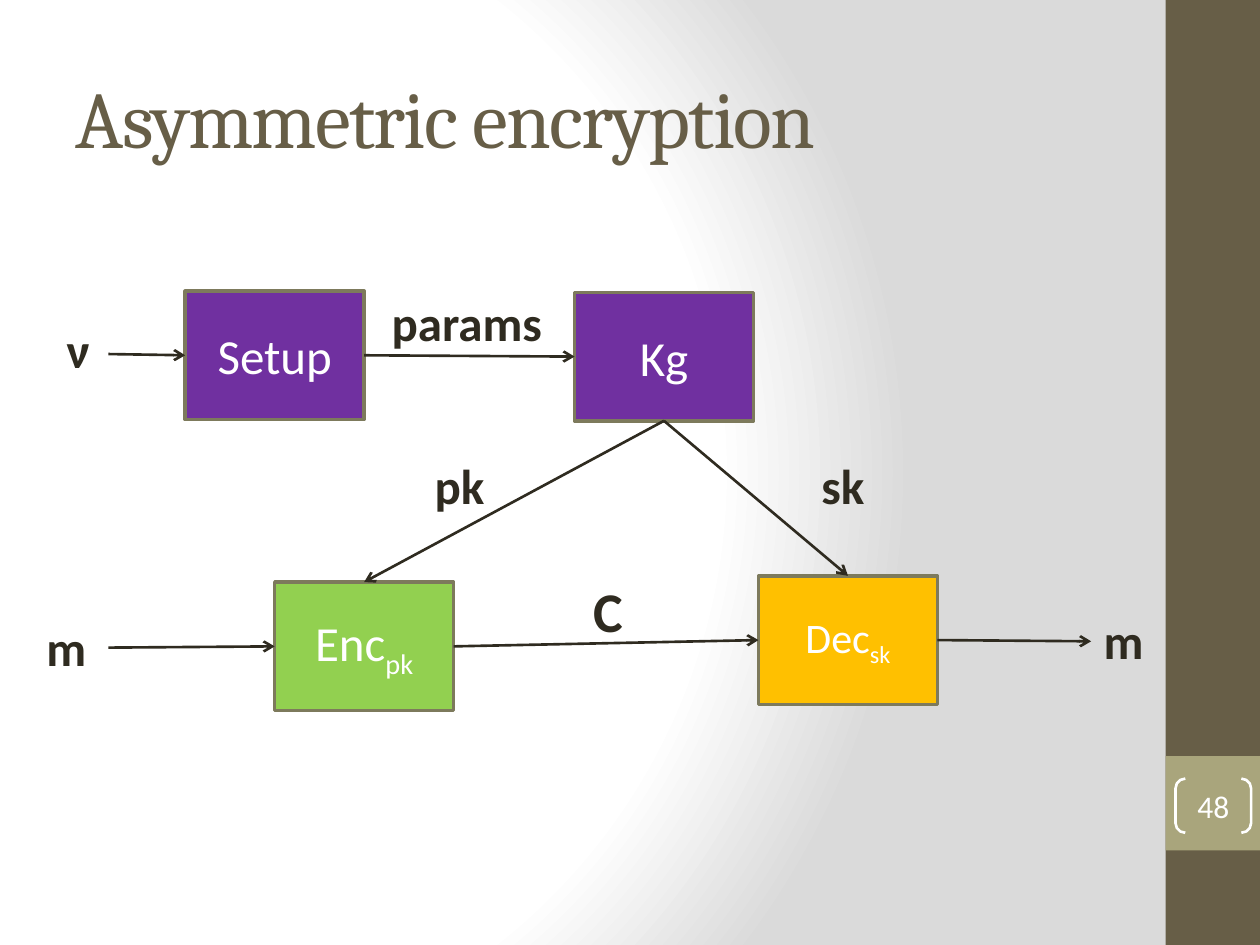
from pptx import Presentation
from pptx import util as u
from pptx.dml.color import RGBColor
from pptx.enum import shapes, text
from pptx.oxml import parse_xml
from pptx.oxml.ns import nsdecls
from pptx.oxml.xmlchemy import OxmlElement

WHITE = RGBColor(0xFF, 0xFF, 0xFF)
INK = RGBColor(0x2F, 0x2B, 0x20)
BROWN = RGBColor(0x67, 0x5E, 0x47)
KHAKI = RGBColor(0xA9, 0xA5, 0x7C)
BORDER = RGBColor(0x7D, 0x7A, 0x5C)
PURPLE = RGBColor(0x70, 0x30, 0xA0)
GREEN = RGBColor(0x92, 0xD0, 0x50)
AMBER = RGBColor(0xFF, 0xC0, 0x00)

TOP, LEFT, BOTTOM, RIGHT = range(4)
BOX_WIDTH, BOX_HEIGHT = 1.42, 1.02
TITLE = "Asymmetric encryption"
PAGE_NUMBER = "48"
STEPS = {
    "Enc": ("pk", 2.18, 4.62, GREEN, 28),
    "Dec": ("sk", 6.02, 4.57, AMBER, 24),
    "Setup": ("", 1.47, 2.31, PURPLE, 28),
    "Kg": ("", 4.56, 2.32, PURPLE, 28),
}
LABELS = [
    ("m", 0.27, 4.85, 0.59, 28),
    ("C", 4.61, 4.53, 0.63, 32),
    ("m", 8.66, 4.8, 0.59, 28),
    ("ν", 0.43, 2.49, 0.59, 28),
    ("params", 3.01, 2.27, 1.43, 28),
    ("pk", 3.35, 3.57, 1.02, 28),
    ("sk", 6.42, 3.57, 1.02, 28),
]
ARROWS = [
    ((0.86, 5.14), ("Enc", LEFT)),
    (("Enc", RIGHT), ("Dec", LEFT)),
    (("Dec", RIGHT), (8.66, 5.09)),
    (("Setup", RIGHT), ("Kg", LEFT)),
    (("Kg", BOTTOM), ("Enc", TOP)),
    (("Kg", BOTTOM), ("Dec", TOP)),
    ((0.86, 2.81), ("Setup", LEFT)),
]
BACKGROUND = f"""<a:gradFill {nsdecls("a")} rotWithShape="1"><a:gsLst>
<a:gs pos="0"><a:srgbClr val="FFFFFF"/></a:gs>
<a:gs pos="75000"><a:srgbClr val="FFFFFF"/></a:gs>
<a:gs pos="100000"><a:srgbClr val="DADADA"/></a:gs></a:gsLst>
<a:path path="circle"><a:fillToRect l="20000" t="50000" r="100000" b="50000"/></a:path>
</a:gradFill>"""


def write(shape, words, size, color, font="Calibri", bold=False, subscript="",
          align=text.PP_ALIGN.LEFT, anchor=text.MSO_ANCHOR.MIDDLE, spacing=0):
    frame = shape.text_frame
    frame.word_wrap = True
    frame.vertical_anchor = anchor
    para = frame.paragraphs[0]
    para.alignment = align
    for part in filter(None, (words, subscript)):
        span = para.add_run()
        span.text = part
        span.font.size, span.font.name, span.font.bold = u.Pt(size), font, bold
        span.font.color.rgb = color
        if spacing:
            span.font._element.set("spc", str(spacing))
    if subscript:
        span.font._element.set("baseline", "-25000")
    return frame


def add_shape(page, kind, place, fill=None, line=None, weight=2):
    shape = page.shapes.add_shape(kind, *map(u.Inches, place))
    shape.shadow.inherit = False
    if fill is None:
        shape.fill.background()
    else:
        shape.fill.solid()
        shape.fill.fore_color.rgb = fill
    if line is None:
        shape.line.fill.background()
    else:
        shape.line.color.rgb = line
        shape.line.width = u.Pt(weight)
    return shape


def add_arrow(page, boxes, start, end):
    points = [(0, 0) if point[0] in boxes else point for point in (start, end)]
    arrow = page.shapes.add_connector(
        shapes.MSO_CONNECTOR.STRAIGHT, *(u.Inches(n) for point in points for n in point))
    for point, join in ((start, arrow.begin_connect), (end, arrow.end_connect)):
        if point[0] in boxes:
            join(boxes[point[0]], point[1])
    arrow.line.color.rgb = INK
    arrow.line.width = u.Pt(1.5)
    head = OxmlElement("a:tailEnd")
    head.set("type", "arrow")
    arrow.line._get_or_add_ln().append(head)
    arrow._element.spPr.append(OxmlElement("a:effectLst"))


def main():
    deck = Presentation()
    deck.slide_width, deck.slide_height = u.Inches(10), u.Inches(7.5)
    page = deck.slides.add_slide(deck.slide_layouts[5])
    page.background.fill.gradient()
    gradient = page._element.xpath(".//p:bg//a:gradFill")[0]
    gradient.getparent().replace(gradient, parse_xml(BACKGROUND))

    rectangle = shapes.MSO_SHAPE.RECTANGLE
    add_shape(page, rectangle, (9.25, 0, 0.75, 7.5), BROWN)
    add_shape(page, rectangle, (9.25, 6, 0.75, 0.75), KHAKI)

    title = page.shapes.title
    title.left, title.top, title.width, title.height = map(u.Inches, (0.5, 0.3, 8.33, 1.25))
    write(title, TITLE, 46, BROWN, font="Cambria", spacing=-100)
    title.text_frame.auto_size = text.MSO_AUTO_SIZE.NONE

    center = text.PP_ALIGN.CENTER
    bracket = add_shape(page, shapes.MSO_SHAPE.DOUBLE_BRACKET,
                        (9.33, 6.18, 0.6, 0.43), line=WHITE, weight=1.5)
    bracket.adjustments[0] = 0.18
    frame = write(bracket, PAGE_NUMBER, 18, WHITE, align=center)
    frame.margin_left = frame.margin_right = frame.margin_top = frame.margin_bottom = 0

    boxes = {}
    for name, (key, left, top, fill, size) in STEPS.items():
        boxes[name] = add_shape(page, rectangle, (left, top, BOX_WIDTH, BOX_HEIGHT), fill, BORDER)
        write(boxes[name], name, size, WHITE, subscript=key, align=center)
    for start, end in ARROWS:
        add_arrow(page, boxes, start, end)
    for words, left, top, width, size in LABELS:
        height = 0.57 if size == 28 else 0.64
        label = page.shapes.add_textbox(*map(u.Inches, (left, top, width, height)))
        frame = write(label, words, size, INK, bold=True, anchor=text.MSO_ANCHOR.TOP)
        frame.auto_size = text.MSO_AUTO_SIZE.SHAPE_TO_FIT_TEXT
    deck.save("out.pptx")


if __name__ == "__main__":
    main()
